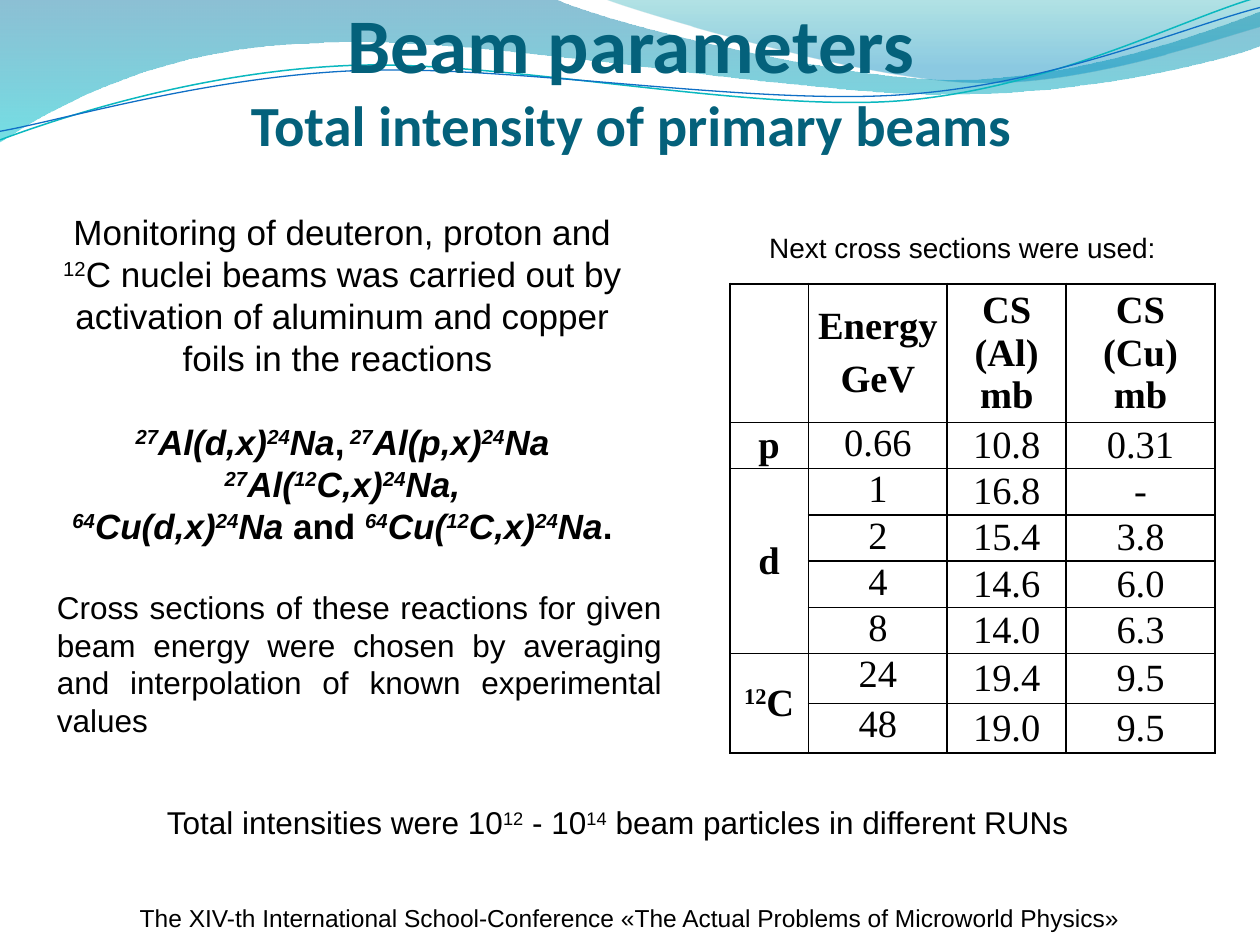
from lxml import etree
from pptx import Presentation
from pptx.dml.color import RGBColor
from pptx.enum.text import MSO_ANCHOR, MSO_AUTO_SIZE, PP_ALIGN
from pptx.oxml import parse_xml
from pptx.oxml.ns import nsdecls, qn
from pptx.util import Pt

CENTER, JUSTIFY = PP_ALIGN.CENTER, PP_ALIGN.JUSTIFY
TOP, MIDDLE, BOTTOM = MSO_ANCHOR.TOP, MSO_ANCHOR.MIDDLE, MSO_ANCHOR.BOTTOM
GROW, FIXED = MSO_AUTO_SIZE.SHAPE_TO_FIT_TEXT, MSO_AUTO_SIZE.NONE
TITLE_ONLY = 5
CURVE_TILT = 357.3

COLORS = {
    "text": "000000", "title": "04617B",
    "blue": "0074A1", "cyan": "00C6CF", "teal": "00A1A9", "sky": "008BBF",
    "teal line": "0AB8BF", "blue line": "0F6FC6",
}


class SlideBuilder:
    body_font, title_font, table_font = "Arial", "Calibri", "Times New Roman"

    def __init__(self, slide):
        self.slide = slide

    def style(self, font, name, size, color="text", bold=False, italic=False):
        font.name, font.size = name, Pt(size)
        font.bold, font.italic = bold, italic
        font.color.rgb = RGBColor.from_string(COLORS[color])

    def runs(self, paragraph, markup):
        """Add runs; ^...^ is superscript and ~...~ is upright."""
        for i, slant in enumerate(markup.split("~")):
            for j, piece in enumerate(slant.split("^")):
                if not piece:
                    continue
                run = paragraph.add_run()
                run.text = piece
                if i % 2:
                    run.font.italic = False
                if j % 2:
                    run._r.get_or_add_rPr().set("baseline", "30000")

    def freeform(self, start, segments, closed):
        """Segments are straight (x, y) or cubic (x1, y1, x2, y2, x, y)."""
        builder = self.slide.shapes.build_freeform(*map(Pt, start), scale=1.0)
        builder.add_line_segments([tuple(map(Pt, s[-2:])) for s in segments], close=closed)
        shape = builder.convert_to_shape()
        shape.shadow.inherit = False
        outline = shape._element.spPr.find(".//" + qn("a:path"))
        for straight, segment in zip(outline.findall(qn("a:lnTo")), segments):
            if len(segment) == 2:
                continue
            bend = etree.Element(qn("a:cubicBezTo"))
            for x, y in zip(segment[::2], segment[1::2]):
                etree.SubElement(bend, qn("a:pt"), x=str(Pt(x) - shape.left),
                                 y=str(Pt(y) - shape.top))
            outline.replace(straight, bend)
        return shape

    def wave(self, start, segments, stops):
        shape = self.freeform(start, segments, True)
        shape.line.fill.background()
        gradient = parse_xml(f'<a:gradFill {nsdecls("a")} rotWithShape="1"><a:gsLst/>'
                             '<a:lin ang="5400000" scaled="0"/></a:gradFill>')
        for position, color, opacity in stops:
            stop = etree.SubElement(gradient[0], qn("a:gs"), pos=str(position * 1000))
            tint = etree.SubElement(stop, qn("a:srgbClr"), val=COLORS[color])
            etree.SubElement(tint, qn("a:alpha"), val=str(opacity * 1000))
        shape._element.spPr.find(qn("a:custGeom")).addnext(gradient)

    def curve(self, start, segments, color, width):
        shape = self.freeform(start, segments, False)
        shape.rotation = CURVE_TILT
        shape.fill.background()
        shape.line.color.rgb = RGBColor.from_string(COLORS[color])
        shape.line.width = Pt(width)

    def title(self, box, lines, sizes):
        title = self.slide.shapes.title
        title._element.getparent().append(title._element)
        title.left, title.top, title.width, title.height = map(Pt, box)
        frame = title.text_frame
        frame.vertical_anchor, frame.auto_size = BOTTOM, FIXED
        frame.margin_left = frame.margin_right = frame.margin_bottom = 0
        heading = frame.paragraphs[0]
        heading.alignment = CENTER
        self.style(heading.font, self.title_font, sizes[0], "title", bold=True)
        for line, size in zip(lines, sizes):
            if heading.runs:
                heading.add_line_break()
            run = heading.add_run()
            run.text, run.font.size = line, Pt(size)

    def text(self, box, paragraphs, size, align=CENTER):
        """Each paragraph is (markup, emphasised, space after)."""
        frame = self.slide.shapes.add_textbox(*map(Pt, box)).text_frame
        frame.word_wrap, frame.auto_size = True, GROW
        for index, (markup, emphasised, after) in enumerate(paragraphs):
            paragraph = frame.add_paragraph() if index else frame.paragraphs[0]
            paragraph.alignment = align
            paragraph.space_after = Pt(after)
            self.style(paragraph.font, self.body_font, size,
                       bold=emphasised, italic=emphasised)
            self.runs(paragraph, markup)

    def borders(self, cell, widths):
        properties = cell._tc.get_or_add_tcPr()
        for side, width in zip("LRTB", widths):
            properties.append(parse_xml(
                f'<a:ln{side} {nsdecls("a")} w="{Pt(width)}"><a:solidFill>'
                f'<a:srgbClr val="{COLORS["text"]}"/></a:solidFill></a:ln{side}>'))

    def table(self, left, top, columns, heights, rows, merges, size):
        table = self.slide.shapes.add_table(
            len(rows), len(columns), Pt(left), Pt(top),
            Pt(sum(columns)), Pt(sum(heights))).table
        table.first_row = table.horz_banding = False
        for column, width in zip(table.columns, columns):
            column.width = Pt(width)
        for row, height in zip(table.rows, heights):
            row.height = Pt(height)
        last = len(rows) - 1
        for r, row in enumerate(rows):
            for c, content in enumerate(row):
                cell = table.cell(r, c)
                cell.margin_left = cell.margin_right = Pt(5.4)
                cell.margin_top = cell.margin_bottom = 0
                cell.vertical_anchor = TOP if c == 1 and r else MIDDLE
                self.borders(cell, (1, 1, 1 if r else 1.5, 1.5 if r == last else 1))
                cell.fill.background()
                for index, line in enumerate(content.split("\n") if content else []):
                    frame = cell.text_frame
                    paragraph = frame.add_paragraph() if index else frame.paragraphs[0]
                    paragraph.alignment = CENTER
                    if c < 2:
                        paragraph.space_before = paragraph.space_after = Pt(3)
                    self.style(paragraph.font, self.table_font, size,
                               bold=r == 0 or c == 0)
                    self.runs(paragraph, line)
        for first, final in merges:
            table.cell(first, 0).merge(table.cell(final, 0))


def main():
    deck = Presentation()
    deck.slide_width, deck.slide_height = Pt(720), Pt(540)
    page = SlideBuilder(deck.slides.add_slide(deck.slide_layouts[TITLE_ONLY]))

    # Wave decoration along the top
    page.wave((0, 0), [
        (316.8, -0.7), (342.7, 12.2, 478.1, 45.4, 545.8, 45.4),
        (614.2, 45.4, 689.8, 18.7, 720, 6.5), (720.7, 25.9),
        (707.8, 31.7, 626.4, 54.7, 537.1, 54), (447.8, 54, 275, 20.2, 185, 24.5),
        (92.9, 25.9, 33.1, 59.8, -0.7, 81.4)], [(0, "blue", 45), (100, "cyan", 55)])
    page.wave((344.9, -0.7), [
        (366.5, 7.9, 491, 44.6, 553.7, 46.8), (616.3, 49.7, 691.9, 23, 720, 15.1),
        (720, 0)], [(0, "teal", 30), (80, "sky", 45)])
    page.curve((-1.4, 63), [
        (33.8, 51.7, 114.1, 29.4, 199.8, 29.9), (284.9, 30.3, 425.8, 67.3, 512.4, 64.9),
        (599, 62.4, 676.4, 25.7, 720.2, 15.5)], "teal line", 0.85)
    page.curve((-1.1, 58), [
        (32.9, 53.8, 118.3, 32.5, 204.1, 33), (290.6, 33.4, 428.9, 63.8, 515.5, 61.4),
        (601.3, 59.6, 678.5, 30.1, 721.4, 21.3)], "blue line", 0.75)

    # Monitoring reactions
    page.text((25.4, 116.6, 340.6, 217.4), [
        ("Monitoring of deuteron, proton and ^12^C nuclei beams was carried out by "
         "activation of aluminum and copper foils in the reactions ", False, 24),
        ("^27^Al(d,x)^24^Na~,~^ 27^Al(p,x)^24^Na ^27^Al(^12^C,x)^24^Na,", True, 0),
        (" ^64^Cu(d,x)^24^Na~ and ~^64^Cu(^12^C,x)^24^Na~. ~", True, 0)], 20)
    page.text((25.4, 332.4, 360, 94.3), [
        ("Cross sections of these reactions for given beam energy were chosen by "
         "averaging and interpolation of known experimental values", False, 0)],
        18, JUSTIFY)

    # Cross sections table
    page.text((422.6, 128.2, 254.9, 26.6),
              [("Next cross sections were used:", False, 0)], 16)
    page.table(417, 162.2, (45, 79.3, 68, 85), [79] + [26.4] * 5 + [28.4] * 2, [
        ("", "Energy\nGeV", "CS (Al)\nmb", "CS (Cu)\nmb"),
        ("p", "0.66", "10.8", "0.31"),
        ("d", "1", "16.8", "-"),
        ("", "2", "15.4", "3.8"),
        ("", "4", "14.6", "6.0"),
        ("", "8", "14.0", "6.3"),
        ("^12^C", "24", "19.4", "9.5"),
        ("", "48", "19.0", "9.5")], [(2, 5), (6, 7)], 22)

    # Title, summary and conference line
    page.title((36.7, 0, 648, 90),
               ("Beam parameters", "Total intensity of primary beams"), (44.1, 32.4))
    page.text((11.3, 455.5, 683.3, 28.8), [
        ("Total intensities were 10^12^ - 10^14^ beam particles in different RUNs",
         False, 0)], 18)
    page.text((0, 512.6, 720, 24.5), [
        ("The XIV-th International School-Conference «The Actual Problems of "
         "Microworld Physics»", False, 0)], 14)

    deck.save("out.pptx")


if __name__ == "__main__":
    main()
